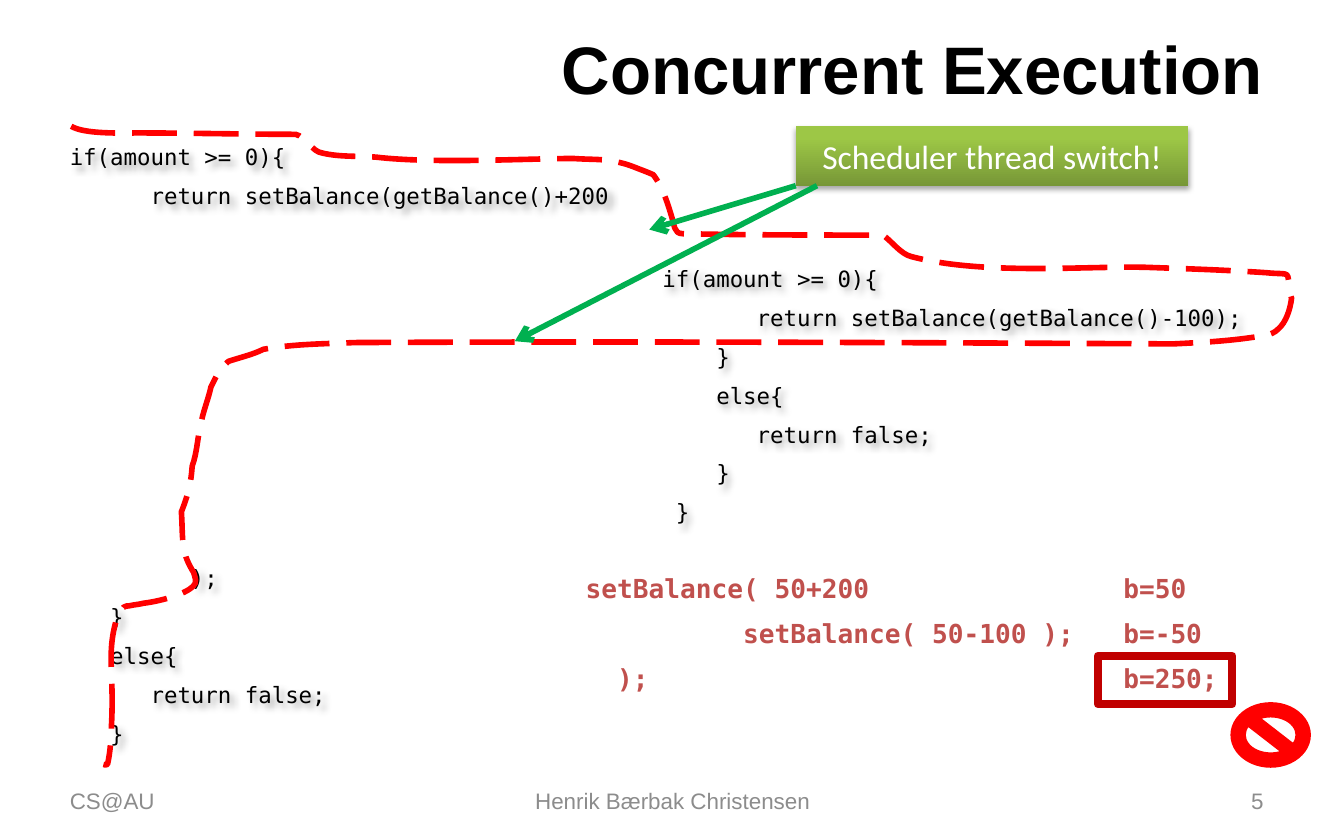
from lxml import etree
from pptx import Presentation
from pptx import util as u
from pptx.dml.color import RGBColor
from pptx.enum import dml, shapes, text
from pptx.oxml.ns import qn

MONO = "DejaVu Sans Mono"
LEFT, CENTER, RIGHT = text.PP_ALIGN.LEFT, text.PP_ALIGN.CENTER, text.PP_ALIGN.RIGHT

# Content: text, (left, top, width, height) in cm, size, colour, bold, alignment
LABELS = [
    ("Concurrent Execution", (1.27, 0.46, 22.86, 1.65), 36, "000000", True, RIGHT),
    ("CS@AU", (1.07, 14.71, 5.92, 0.84), 12, "8C8C8C", False, LEFT),
    ("Henrik Bærbak Christensen", (8.69, 14.71, 8.05, 0.84), 12, "8C8C8C", False, CENTER),
    ("5", (18.21, 14.71, 5.92, 0.84), 12, "8C8C8C", False, RIGHT),
]
WITHDRAW = [
    "if(amount >= 0){",
    "       return setBalance(getBalance()-100);",
    "    }",
    "    else{",
    "       return false;",
    "    }",
    " }",
]
DEPOSIT_START = [
    "if(amount >= 0){",
    "      return setBalance(getBalance()+200",
]
DEPOSIT_END = [
    "         );",
    "   }",
    "   else{",
    "      return false;",
    "   }",
]
TRACE = [
    "setBalance( 50+200\tb=50",
    "          setBalance( 50-100 );\tb=-50",
    "  );\tb=250;",
]
# Code blocks: lines, box, size, colour, bold, gap between lines, shadow
CODE = [
    (WITHDRAW, (12.27, 4.88, 12.5, 5.33), 12, "000000", False, 6.5, True),
    (DEPOSIT_START, (1.07, 2.59, 12.27, 1.9), 12, "000000", False, 6.5, True),
    (DEPOSIT_END, (1.07, 10.54, 12.27, 3.9), 12, "000000", False, 6.5, True),
    (TRACE, (10.82, 10.69, 12.7, 2.62), 14, "C0504D", True, 7.5, False),
]
ARROWS = [(15.04, 3.51, 12.27, 4.34), (15.44, 3.51, 9.73, 6.45)]

# Thread route: start, then two control points and an end point per curve
ROUTE_UNIT = 0.0254  # cm
ROUTE_START = (53, 94)
ROUTE = [
    (63, 100, 90, 99, 102, 99), (141, 99, 180, 100, 220, 100),
    (228, 102, 232, 113, 240, 114), (253, 117, 266, 116, 280, 117),
    (323, 122, 393, 118, 427, 118), (439, 119, 450, 118, 461, 121),
    (466, 122, 471, 124, 476, 126), (479, 127, 486, 130, 486, 130),
    (493, 139, 497, 152, 500, 162), (502, 167, 501, 174, 508, 174),
    (558, 175, 607, 175, 657, 175), (664, 180, 670, 189, 678, 191),
    (731, 205, 806, 198, 852, 199), (882, 200, 912, 201, 942, 203),
    (962, 205, 957, 200, 960, 218), (960, 220, 961, 221, 961, 222),
    (960, 230, 957, 240, 951, 245), (946, 250, 939, 250, 933, 251),
    (913, 254, 893, 255, 873, 256), (669, 255, 467, 254, 264, 255),
    (241, 256, 219, 256, 196, 260), (188, 264, 179, 266, 170, 269),
    (163, 275, 161, 280, 157, 288), (155, 297, 152, 304, 150, 313),
    (147, 324, 147, 336, 143, 347), (142, 361, 140, 368, 135, 381),
    (136, 397, 135, 401, 138, 413), (139, 418, 144, 426, 144, 426),
    (145, 429, 147, 434, 144, 436), (138, 443, 116, 448, 107, 449),
    (103, 450, 100, 450, 96, 451), (95, 451, 93, 451, 92, 452),
    (90, 454, 87, 460, 87, 460), (79, 487, 85, 499, 83, 539),
    (83, 547, 82, 561, 80, 569), (79, 570, 78, 569, 77, 569),
]


def rgb(value):
    return RGBColor.from_string(value)


def cm(values):
    return [u.Cm(v) for v in values]


def add(parent, tag, **attrs):
    return etree.SubElement(parent, qn(tag), {k: str(v) for k, v in attrs.items()})


def add_shadow(sp, blur, dist, angle, alpha):
    sp.shadow.inherit = False
    effects = sp._element.spPr.find(qn("a:effectLst"))
    shadow = add(effects, "a:outerShdw", blurRad=u.Pt(blur), dist=u.Pt(dist),
                 dir=angle * 60000, algn="tl", rotWithShape=0)
    add(add(shadow, "a:srgbClr", val="000000"), "a:alpha", val=alpha * 1000)


def set_font(p, name, size, color, bold=False):
    for r in p.runs:
        r.font.name, r.font.size, r.font.bold = name, u.Pt(size), bold
        r.font.color.rgb = rgb(color)


def set_line(sp, color, width):
    sp.line.color.rgb = rgb(color)
    sp.line.width = u.Pt(width)


def add_shape(s, kind, box):
    sp = s.shapes.add_shape(kind, *cm(box))
    sp.shadow.inherit = False
    return sp


def add_label(s, label, box, size, color, bold, align):
    tf = s.shapes.add_textbox(*cm(box)).text_frame
    tf.word_wrap = True
    tf.vertical_anchor = text.MSO_ANCHOR.MIDDLE
    tf.text = label
    p = tf.paragraphs[0]
    p.alignment = align
    set_font(p, "Arial", size, color, bold)


def add_code(s, lines, box, size, color, bold, gap, shadow):
    sp = s.shapes.add_textbox(*cm(box))
    tf = sp.text_frame
    tf.word_wrap = True
    for i, line in enumerate(lines):
        p = tf.paragraphs[0] if i == 0 else tf.add_paragraph()
        p.text = line
        if i:
            p.space_before = u.Pt(gap)
        if "\t" in line:
            tabs = add(p._p.get_or_add_pPr(), "a:tabLst")
            add(tabs, "a:tab", pos=u.Cm(10.16), algn="l")
        set_font(p, MONO, size, color, bold)
    if shadow:
        add_shadow(sp, 4, 3, 45, 40)


def add_route(s):
    points = [(c[i], c[i + 1]) for c in ROUTE for i in (0, 2, 4)]
    fb = s.shapes.build_freeform(*ROUTE_START, scale=u.Cm(ROUTE_UNIT))
    fb.add_line_segments(points, close=False)
    sp = fb.convert_to_shape()
    # Every three straight segments become one Bézier curve
    segments = list(sp._element.iter(qn("a:lnTo")))
    for i in range(0, len(segments), 3):
        curve = etree.Element(qn("a:cubicBezTo"))
        segments[i].addprevious(curve)
        for seg in segments[i:i + 3]:
            curve.append(seg[0])
            seg.getparent().remove(seg)
    sp.shadow.inherit = False
    sp.fill.background()
    set_line(sp, "FF0000", 3)
    sp.line.dash_style = dml.MSO_LINE.LONG_DASH


def add_callout(s):
    sp = add_shape(s, shapes.MSO_SHAPE.RECTANGLE, (15.04, 2.39, 7.42, 1.12))
    sp.fill.gradient()
    sp.fill.gradient_angle = 90
    for stop, (pos, color) in zip(sp.fill.gradient_stops, [(0, "779737"), (0.8, "9DC746")]):
        stop.position = pos
        stop.color.rgb = rgb(color)
    sp.line.fill.background()
    add_shadow(sp, 3.1, 1.8, 90, 35)
    tf = sp.text_frame
    tf.text = "Scheduler thread switch!"
    tf.vertical_anchor = text.MSO_ANCHOR.MIDDLE
    p = tf.paragraphs[0]
    p.alignment = CENTER
    set_font(p, "Calibri", 18, "FFFFFF")


def add_arrow(s, ends):
    c = s.shapes.add_connector(shapes.MSO_CONNECTOR.STRAIGHT, *cm(ends))
    set_line(c, "00B050", 3)
    add(c.line._get_or_add_ln(), "a:tailEnd", type="arrow")
    add(c._element.spPr, "a:effectLst")


def main():
    prs = Presentation()
    prs.slide_width, prs.slide_height = cm((25.4, 15.88))
    s = prs.slides.add_slide(prs.slide_layouts[6])

    # Title, footer and code
    for label in LABELS:
        add_label(s, *label)
    for block in CODE[:-1]:
        add_code(s, *block)
    add_route(s)
    add_code(s, *CODE[-1])

    # Callout with its arrows
    add_callout(s)
    for ends in ARROWS:
        add_arrow(s, ends)

    # Marks on the wrong result
    sp = add_shape(s, shapes.MSO_SHAPE.RECTANGLE, (20.75, 12.4, 2.54, 0.91))
    sp.fill.background()
    set_line(sp, "C00000", 4.5)
    sp = add_shape(s, shapes.MSO_SHAPE.NO_SYMBOL, (23.29, 13.31, 1.45, 1.17))
    sp.fill.solid()
    sp.fill.fore_color.rgb = rgb("FF0000")
    set_line(sp, "FF0000", 2)

    prs.save("out.pptx")


if __name__ == "__main__":
    main()
